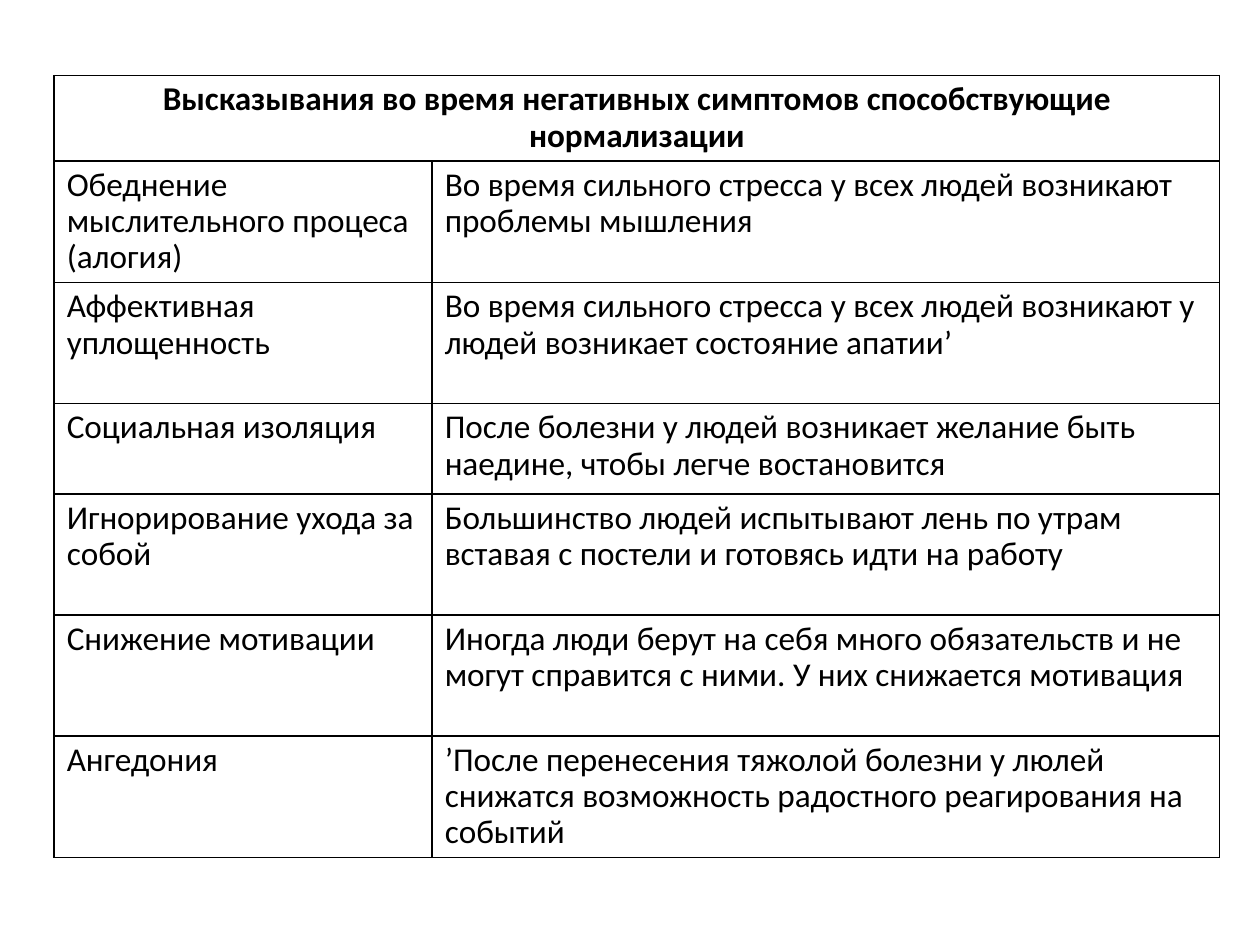
from lxml import etree
from pptx import Presentation
from pptx.dml.color import RGBColor
from pptx.enum.text import PP_ALIGN
from pptx.oxml.ns import qn
from pptx.util import Inches, Pt

CENTER, LEFT = PP_ALIGN.CENTER, PP_ALIGN.LEFT
COLORS = {"ink": "000000", "paper": "FFFFFF"}
FONT, SIZE = "Calibri", 19
BLANK_LAYOUT = 6
COLUMN_SHARES = (3 / 9.25, 6.25 / 9.25)
ROW_HEIGHTS = (0.67, 0.96, 0.96, 0.72, 0.96, 0.96, 0.96)

HEADING = "Высказывания во время негативных симптомов способствующие нормализации"
STATEMENTS = [
    ("Обеднение мыслительного процеса (алогия)",
     "Во время сильного стресса у всех людей возникают проблемы мышления"),
    ("Аффективная уплощенность",
     "Во время сильного стресса у всех людей возникают у людей возникает состояние апатии’"),
    ("Социальная изоляция",
     "После болезни у людей возникает желание быть наедине, чтобы легче востановится"),
    ("Игнорирование ухода за собой",
     "Большинство людей испытывают лень по утрам вставая с постели и готовясь идти на работу"),
    ("Снижение мотивации",
     "Иногда люди берут на себя много обязательств и не могут справится с ними. "
     "У них снижается мотивация"),
    ("Ангедония",
     "’После перенесения тяжолой болезни у люлей снижатся возможность радостного "
     "реагирования на событий"),
]


def rgb(name):
    return RGBColor.from_string(COLORS[name])


def set_borders(cell, width=1):
    """Draw all four sides; the line elements must precede the cell's fill."""
    tc_pr = cell._tc.get_or_add_tcPr()
    for i, side in enumerate(("a:lnL", "a:lnR", "a:lnT", "a:lnB")):
        ln = etree.Element(qn(side), w=str(Pt(width)))
        fill = etree.SubElement(ln, qn("a:solidFill"))
        etree.SubElement(fill, qn("a:srgbClr"), val=COLORS["ink"])
        tc_pr.insert(i, ln)


def style_cell(cell):
    cell.fill.solid()
    cell.fill.fore_color.rgb = rgb("paper")
    cell.margin_left = cell.margin_right = Inches(0.1)
    cell.margin_top = cell.margin_bottom = Inches(0.05)
    set_borders(cell)


def write_cell(cell, text, bold=False, align=LEFT):
    p = cell.text_frame.paragraphs[0]
    p.alignment = align
    p.line_spacing = 0.9
    r = p.add_run()
    r.text = text
    r.font.name, r.font.size, r.font.bold = FONT, Pt(SIZE), bold
    r.font.color.rgb = rgb("ink")


def add_statement_table(s, left, top, width, height):
    table = s.shapes.add_table(len(STATEMENTS) + 1, len(COLUMN_SHARES),
                               left, top, width, height).table
    table.first_row = table.horz_banding = False
    for column, share in zip(table.columns, COLUMN_SHARES):
        column.width = round(width * share)
    for row, part in zip(table.rows, ROW_HEIGHTS):
        row.height = round(height * part / sum(ROW_HEIGHTS))
    for cell in table.iter_cells():
        style_cell(cell)

    table.cell(0, 0).merge(table.cell(0, 1))
    write_cell(table.cell(0, 0), HEADING, bold=True, align=CENTER)
    for i, pair in enumerate(STATEMENTS, start=1):
        for j, text in enumerate(pair):
            write_cell(table.cell(i, j), text)


def main():
    prs = Presentation()
    prs.slide_width, prs.slide_height = Inches(10), Inches(7.5)
    s = prs.slides.add_slide(prs.slide_layouts[BLANK_LAYOUT])
    add_statement_table(s, Inches(0.43), Inches(0.6), Inches(9.25),
                        Inches(sum(ROW_HEIGHTS)))
    prs.save("out.pptx")


if __name__ == "__main__":
    main()
